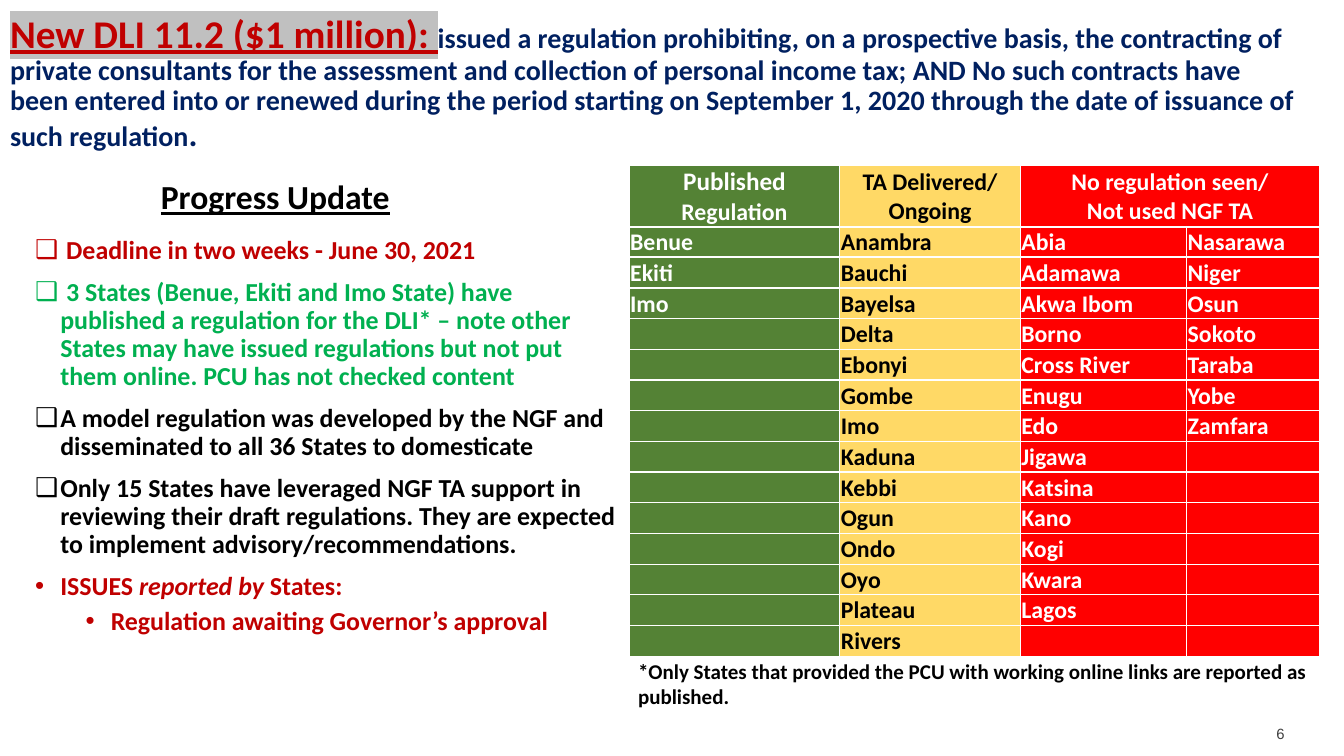
from itertools import zip_longest

from lxml import etree
from pptx import Presentation
from pptx import util as u
from pptx.dml.color import RGBColor
from pptx.enum import text
from pptx.oxml.ns import qn

COLORS = {"white": "FFFFFF", "black": "000000", "crimson": "C00000", "navy": "002060",
          "silver": "C0C0C0", "lime": "00B050", "green": "548235", "yellow": "FFD966",
          "red": "FF0000", "gray": "404040"}

# Content: each run is (text, format values)
TITLE = [
    ("New DLI 11.2 ($1 million): ",
     {"size": 28, "color": "crimson", "underline": True, "highlight": "silver"}),
    ("issued a regulation prohibiting, on a prospective basis, the contracting of private "
     "consultants for the assessment and collection of personal income tax; AND No such "
     "contracts have been entered into or renewed during the period starting on "
     "September 1, 2020 through the date of issuance of such regulation",
     {"size": 20, "color": "navy"}),
    (".", {"size": 24, "color": "navy"}),
]
HEADING = [("Progress Update", {"size": 24, "underline": True})]
FOOTNOTE = [("*Only States that provided the PCU with working online links are reported "
             "as published.", {"size": 15})]
PAGE_NUMBER = [("6", {"size": 10.6, "color": "gray", "name": "Arial", "bold": False})]

# Bullets: (level, bullet, color, runs)
BULLETS = [
    (0, "❑", "crimson", [(" Deadline in two weeks - June 30, 2021", {})]),
    (0, "❑", "lime", [(" 3 States (Benue, Ekiti and Imo State) have published a regulation "
                       "for the DLI* – note other States may have issued regulations but not "
                       "put them online. PCU has not checked content", {})]),
    (0, "❑", "black", [("A model regulation was developed by the NGF and disseminated to all "
                        "36 States to domesticate", {})]),
    (0, "❑", "black", [("Only 15 States have leveraged NGF TA support in reviewing their draft "
                        "regulations. They are expected to implement "
                        "advisory/recommendations.", {})]),
    (0, "•", "crimson", [("ISSUES ", {}), ("reported by ", {"italic": True}), ("States:", {})]),
    (1, "•", "crimson", [("Regulation awaiting Governor’s approval", {})]),
]

# Table columns: (width, fill, text color, header paragraphs, states)
COLUMNS = [
    (2.09, "green", "white", [[("Published ", {"size": 18}), ("Regulation", {})]],
     ["Benue", "Ekiti", "Imo"]),
    (1.79, "yellow", "black", [[("TA Delivered/", {})], [("Ongoing", {})]],
     ["Anambra", "Bauchi", "Bayelsa", "Delta", "Ebonyi", "Gombe", "Imo", "Kaduna", "Kebbi",
      "Ogun", "Ondo", "Oyo", "Plateau", "Rivers"]),
    (1.65, "red", "white", [[("No regulation seen/", {})], [("Not used NGF TA", {})]],
     ["Abia", "Adamawa", "Akwa Ibom", "Borno", "Cross River", "Enugu", "Edo", "Jigawa",
      "Katsina", "Kano", "Kogi", "Kwara", "Lagos"]),
    (1.32, "red", "white", [],
     ["Nasarawa", "Niger", "Osun", "Sokoto", "Taraba", "Yobe", "Zamfara"]),
]
TABLE_LEFT, TABLE_TOP, TABLE_HEIGHT = 6.24, 1.64, 4.87
CELL_SIZE = 17


def rgb(name):
    return RGBColor.from_string(COLORS[name])


def add_solid_color(parent, tag, name):
    holder = etree.SubElement(parent, qn(tag))
    etree.SubElement(holder, qn("a:srgbClr"), val=COLORS[name])
    return holder


def add_runs(paragraph, runs, **defaults):
    for words, changes in runs:
        values = {"name": "Calibri", "bold": True, "color": "black", **defaults, **changes}
        color, highlight = values.pop("color"), values.pop("highlight", None)
        values["size"] = u.Pt(values["size"])
        run = paragraph.add_run()
        run.text = words
        for key, value in values.items():
            setattr(run.font, key, value)
        run.font.color.rgb = rgb(color)
        if highlight:
            properties = run.font._element
            mark = add_solid_color(properties, "a:highlight", highlight)
            properties.find(qn("a:solidFill")).addnext(mark)


def add_text(box, paragraphs, margins=(0.1, 0.05, 0.1, 0.05), **paragraph_format):
    frame = slide.shapes.add_textbox(*map(u.Inches, box)).text_frame
    frame.word_wrap = True
    for side, margin in zip(("left", "top", "right", "bottom"), margins):
        setattr(frame, f"margin_{side}", u.Inches(margin))
    fill_paragraphs(frame, paragraphs, paragraph_format)
    return frame


def fill_paragraphs(frame, paragraphs, paragraph_format, **defaults):
    for index, runs in enumerate(paragraphs):
        paragraph = frame.paragraphs[0] if index == 0 else frame.add_paragraph()
        for key, value in paragraph_format.items():
            setattr(paragraph, key, value)
        add_runs(paragraph, runs, **defaults)


def set_bullet(paragraph, level, bullet):
    paragraph.level = level
    properties = paragraph._p.get_or_add_pPr()
    properties.set("marL", str(u.Inches(0.25 + 0.5 * level)))
    properties.set("indent", str(u.Inches(-0.25)))
    etree.SubElement(properties, qn("a:buFont"), typeface="Arial")
    etree.SubElement(properties, qn("a:buChar"), char=bullet)


def style_cell(cell, fill, top, bottom):
    cell.vertical_anchor = text.MSO_ANCHOR.MIDDLE
    for side, margin in {"left": 0.01, "top": 0.01, "right": 0.01, "bottom": 0}.items():
        setattr(cell, f"margin_{side}", u.Inches(margin))
    properties = cell._tc.get_or_add_tcPr()
    for side, width in {"L": 1, "R": 1, "T": top, "B": bottom}.items():
        border = etree.SubElement(properties, qn(f"a:ln{side}"), w=str(u.Pt(width)))
        add_solid_color(border, "a:solidFill", "white")
    cell.fill.solid()
    cell.fill.fore_color.rgb = rgb(fill)


presentation = Presentation()
presentation.slide_width, presentation.slide_height = u.Inches(13.33), u.Inches(7.5)
slide = presentation.slides.add_slide(presentation.slide_layouts[6])

# Title
add_text((0.1, 0.14, 12.84, 1.39), [TITLE], (0, 0, 0, 0), line_spacing=0.9)

# Progress bullets
progress = add_text((0.25, 2.3, 5.99, 4.72), [])
for index, (level, bullet, color, runs) in enumerate(BULLETS):
    paragraph = progress.paragraphs[0] if index == 0 else progress.add_paragraph()
    paragraph.line_spacing = 0.9
    paragraph.space_before = u.Pt(5 if level else 10)
    set_bullet(paragraph, level, bullet)
    add_runs(paragraph, runs, size=18.5, color=color)

# States table: the header is two units high, every other row one
widths, fills, inks, headers, states = zip(*COLUMNS)
rows = list(zip_longest(*states, fillvalue=""))
unit = TABLE_HEIGHT / (len(rows) + 2)
table = slide.shapes.add_table(
    len(rows) + 1, len(COLUMNS), u.Inches(TABLE_LEFT), u.Inches(TABLE_TOP),
    u.Inches(sum(widths)), u.Inches(TABLE_HEIGHT)).table
for column, width in zip(table.columns, widths):
    column.width = u.Inches(width)
for index, row in enumerate(table.rows):
    row.height = u.Inches(unit * (1 if index else 2))

for r, row in enumerate([headers, *rows]):
    for c, content in enumerate(row):
        cell = table.cell(r, c)
        style_cell(cell, fills[c], 1.5 if r in (1, 2) else 1, 1.5 if r in (0, 1) else 1)
        paragraphs = content if r == 0 else [[(content, {})]] if content else []
        alignment = text.PP_ALIGN.LEFT if r else text.PP_ALIGN.CENTER
        fill_paragraphs(cell.text_frame, paragraphs, {"alignment": alignment},
                        size=CELL_SIZE, color=inks[c])
        if not paragraphs:
            etree.SubElement(cell.text_frame.paragraphs[0]._p, qn("a:endParaRPr"),
                             sz=str(CELL_SIZE * 100))
table.cell(0, 2).merge(table.cell(0, 3))

# Heading, page number and footnote
add_text((0.86, 1.7, 3.74, 0.5), [HEADING], alignment=text.PP_ALIGN.CENTER)
add_text((12.66, 7.16, 0.28, 0.21), [PAGE_NUMBER], (0, 0.03, 0, 0))
add_text((6.23, 6.48, 6.85, 0.61), [FOOTNOTE])

presentation.save("out.pptx")
